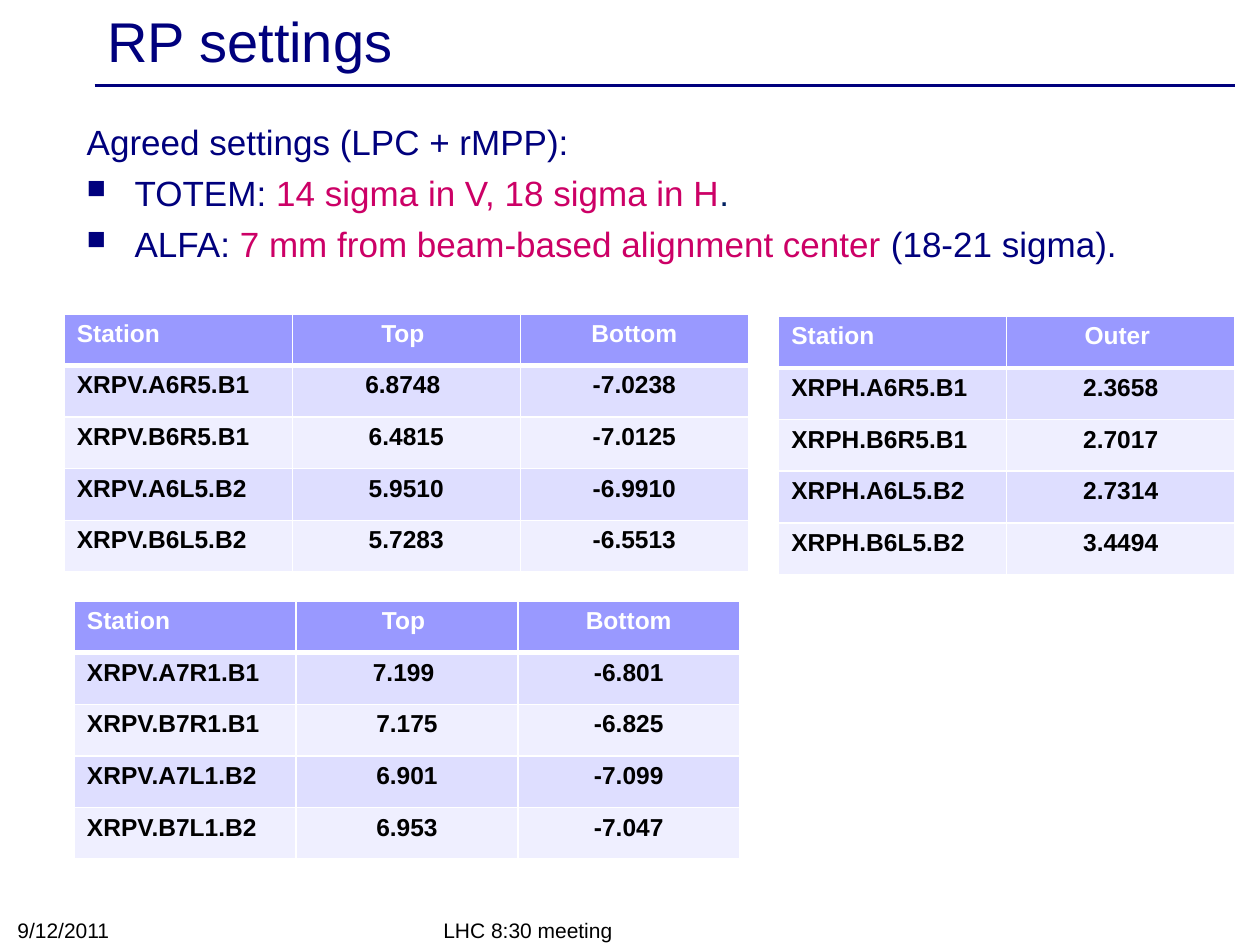
from lxml import etree
from pptx import Presentation
from pptx.dml.color import RGBColor
from pptx.enum.shapes import MSO_CONNECTOR as Connector
from pptx.enum.text import MSO_ANCHOR as Anchor, PP_ALIGN as Align
from pptx.oxml.ns import qn
from pptx.util import Inches, Pt

FONT = "Arial"
COLORS = {
    "navy": "00007D",
    "magenta": "CC0066",
    "dark_blue": "002060",
    "black": "000000",
    "white": "FFFFFF",
    "header": "9999FF",
    "odd_row": "DEDEFF",
    "even_row": "EFEFFF",
}
ROW_HEIGHT = 0.41

VERTICAL_R5 = [
    ("Station", "Top ", "Bottom"),
    ("XRPV.A6R5.B1", "6.8748 ", "-7.0238"),
    ("XRPV.B6R5.B1 ", "6.4815", "-7.0125"),
    ("XRPV.A6L5.B2 ", "5.9510", "-6.9910"),
    ("XRPV.B6L5.B2 ", "5.7283", "-6.5513"),
]
HORIZONTAL_R5 = [
    ("Station", "Outer "),
    ("XRPH.A6R5.B1 ", "2.3658"),
    ("XRPH.B6R5.B1 ", "2.7017"),
    ("XRPH.A6L5.B2 ", "2.7314"),
    ("XRPH.B6L5.B2 ", "3.4494"),
]
VERTICAL_R1 = [
    ("Station", "Top ", "Bottom"),
    ("XRPV.A7R1.B1", "7.199 ", "-6.801"),
    ("XRPV.B7R1.B1 ", "7.175", "-6.825"),
    ("XRPV.A7L1.B2 ", "6.901", "-7.099"),
    ("XRPV.B7L1.B2 ", "6.953", "-7.047"),
]
SETTINGS = [
    [("Agreed settings (LPC + rMPP):", "navy")],
    [("TOTEM: ", "navy"), ("14 sigma in V, 18 sigma in H", "magenta"), (".", "dark_blue")],
    [("ALFA: ", "navy"), ("7 mm from beam-based alignment center ", "magenta"),
     ("(18-21 sigma).", "navy")],
]


def rgb(name):
    return RGBColor.from_string(COLORS[name])


def write(paragraph, text, size=12, color="black", bold=False, align=Align.LEFT):
    paragraph.alignment = align
    run = paragraph.add_run()
    run.text = text
    run.font.name = FONT
    run.font.size = Pt(size)
    run.font.bold = bold
    run.font.color.rgb = rgb(color)


def place(shape, box):
    shape.left, shape.top, shape.width, shape.height = map(Inches, box)


def add_text_box(slide, box, anchor=Anchor.TOP):
    frame = slide.shapes.add_textbox(*map(Inches, box)).text_frame
    frame.word_wrap = True
    frame.vertical_anchor = anchor
    return frame


def add_title(slide, box, text):
    title = slide.shapes.title
    place(title, box)
    title.text_frame.vertical_anchor = Anchor.MIDDLE
    write(title.text_frame.paragraphs[0], text, size=32, color="navy")

    # Rule under the title
    left, top, width, height = box
    rule_y = Inches(top + height + 0.08)
    rule = slide.shapes.add_connector(
        Connector.STRAIGHT, Inches(left), rule_y, Inches(left + width + 0.05), rule_y)
    rule.line.color.rgb = rgb("navy")
    rule.line.width = Pt(2)
    etree.SubElement(rule._element.spPr, qn("a:effectLst"))


def add_bullet(paragraph):
    properties = paragraph._p.get_or_add_pPr()
    properties.set("marL", str(Inches(0.38)))
    properties.set("indent", str(Inches(-0.38)))
    color = etree.SubElement(properties, qn("a:buClr"))
    etree.SubElement(color, qn("a:srgbClr"), val=COLORS["navy"])
    etree.SubElement(properties, qn("a:buSzPct"), val="75000")
    etree.SubElement(properties, qn("a:buChar"), char="■")


def add_settings(slide, box, lines):
    frame = add_text_box(slide, box)
    for index, pieces in enumerate(lines):
        paragraph = frame.add_paragraph() if index else frame.paragraphs[0]
        if index:
            add_bullet(paragraph)
            paragraph.space_before = Pt(5)
        for text, color in pieces:
            write(paragraph, text, size=20, color=color)


def set_borders(cell, top, bottom):
    properties = cell._tc.get_or_add_tcPr()
    widths = {"lnL": 1, "lnR": 1, "lnT": top, "lnB": bottom}
    for position, (side, width) in enumerate(widths.items()):
        line = etree.Element(qn(f"a:{side}"), w=str(Pt(width)))
        fill = etree.SubElement(line, qn("a:solidFill"))
        etree.SubElement(fill, qn("a:srgbClr"), val=COLORS["white"])
        properties.insert(position, line)


def add_station_table(slide, left, top, column_width, rows):
    columns = len(rows[0])
    table = slide.shapes.add_table(
        len(rows), columns, Inches(left), Inches(top),
        Inches(column_width * columns), Inches(ROW_HEIGHT * len(rows))).table
    for row_index, values in enumerate(rows):
        header = row_index == 0
        fill = "header" if header else "odd_row" if row_index % 2 else "even_row"
        for column_index, value in enumerate(values):
            cell = table.cell(row_index, column_index)
            cell.fill.solid()
            cell.fill.fore_color.rgb = rgb(fill)
            set_borders(cell, top=3 if row_index == 1 else 1, bottom=3 if header else 1)
            write(cell.text_frame.paragraphs[0], value, size=14, bold=True,
                  color="white" if header else "black",
                  align=Align.CENTER if column_index else Align.LEFT)


def add_footer(slide, box, text):
    frame = add_text_box(slide, box, anchor=Anchor.BOTTOM)
    write(frame.paragraphs[0], text)


def main():
    presentation = Presentation()
    presentation.slide_width, presentation.slide_height = Inches(10), Inches(7.5)
    slide = presentation.slides.add_slide(presentation.slide_layouts[5])

    # Heading and agreed settings
    add_title(slide, (0.75, 0.03, 9, 0.57), "RP settings")
    add_settings(slide, (0.59, 0.91, 9, 1.26), SETTINGS)

    # Station tables
    add_station_table(slide, 0.51, 2.49, 1.81, VERTICAL_R5)
    add_station_table(slide, 6.18, 2.51, 1.81, HORIZONTAL_R5)
    add_station_table(slide, 0.59, 4.77, 1.76, VERTICAL_R1)

    # Footer
    add_footer(slide, (3.42, 7.25, 3.17, 0.28), "LHC 8:30 meeting")
    add_footer(slide, (0.04, 7.24, 2.33, 0.29), "9/12/2011")

    presentation.save("out.pptx")


if __name__ == "__main__":
    main()
